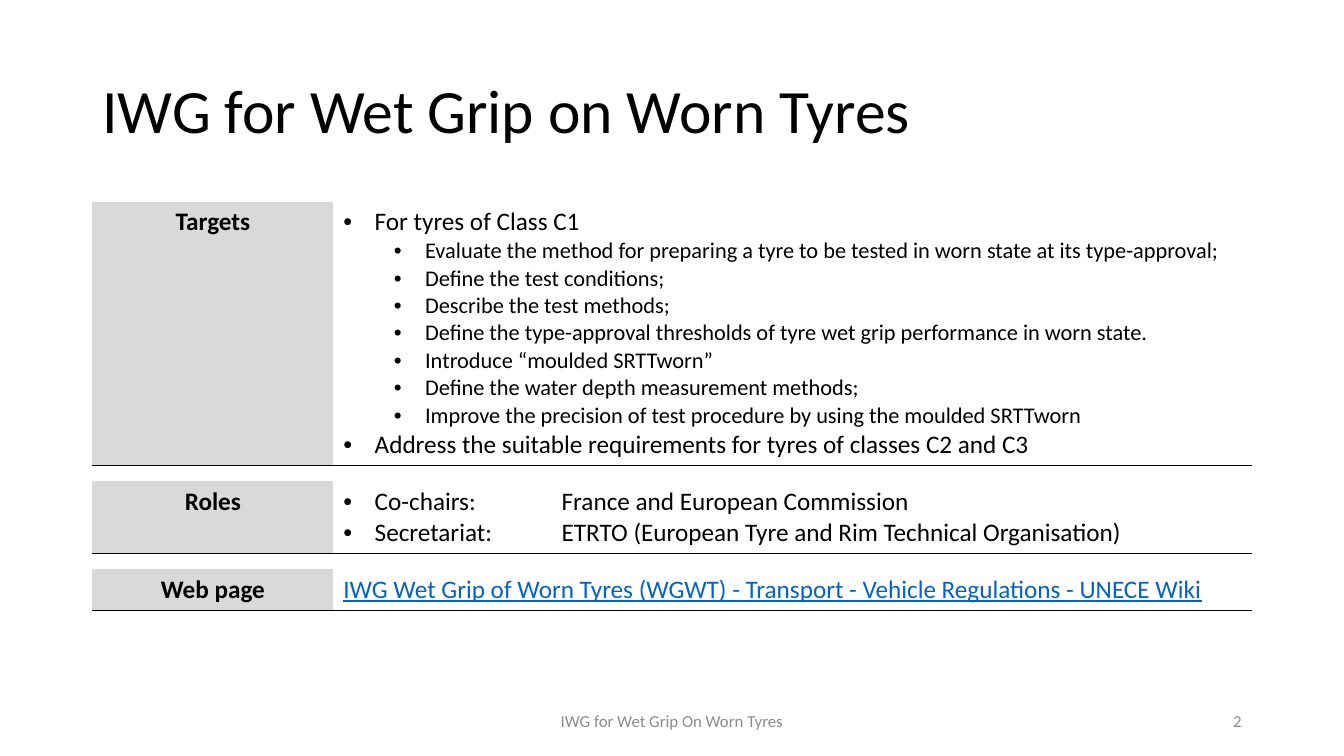
from dataclasses import dataclass

from lxml import etree
from pptx import Presentation
from pptx.dml.color import RGBColor
from pptx.enum import text as t
from pptx.oxml import parse_xml
from pptx.oxml import ns
from pptx.util import Cm, Pt


@dataclass(frozen=True)
class Theme:
    font: str = "Calibri"
    ink: str = "000000"
    label_fill: str = "D9D9D9"
    link: str = "0563C1"
    muted: str = "8C8C8C"
    title: int = 44
    body: int = 18
    detail: int = 16
    footer: int = 12


theme = Theme()


def add_run(paragraph, words, size, color=theme.ink, bold=False, underline=False):
    run = paragraph.add_run()
    run.text = words
    run.font.name = theme.font
    run.font.size = Pt(size)
    run.font.bold = bold
    run.font.underline = underline
    run.font.color.rgb = RGBColor.from_string(color)


def add_bullet(paragraph, level, tab_stop=None):
    paragraph.level = level
    properties = paragraph._p.get_or_add_pPr()
    properties.set("marL", str(Cm(0.79 + 1.27 * level)))
    properties.set("indent", str(Cm(-0.79)))
    font = etree.SubElement(properties, ns.qn("a:buFont"))
    font.set("typeface", "Arial")
    etree.SubElement(properties, ns.qn("a:buChar")).set("char", "•")
    if tab_stop:
        tabs = etree.SubElement(properties, ns.qn("a:tabLst"))
        tab = etree.SubElement(tabs, ns.qn("a:tab"))
        tab.set("pos", str(tab_stop))
        tab.set("algn", "l")


presentation = Presentation()
presentation.slide_width = Cm(33.87)
presentation.slide_height = Cm(19.05)
slide = presentation.slides.add_slide(presentation.slide_layouts[5])

# Title
title = slide.shapes.title
title.left, title.top, title.width, title.height = Cm(2.33), Cm(1.01), Cm(29.21), Cm(3.68)
title.text_frame.vertical_anchor = t.MSO_ANCHOR.MIDDLE
title.text_frame.word_wrap = True
heading = title.text_frame.paragraphs[0]
heading.alignment = t.PP_ALIGN.LEFT
heading.line_spacing = 0.9
add_run(heading, "IWG for Wet Grip on Worn Tyres", theme.title)

# Table content: label and (level, text) lines; None marks a spacer row
sections = [
    ("Targets", [
        (0, "For tyres of Class C1"),
        (1, "Evaluate the method for preparing a tyre to be tested in worn state at its type-approval;"),
        (1, "Define the test conditions;"),
        (1, "Describe the test methods;"),
        (1, "Define the type-approval thresholds of tyre wet grip performance in worn state."),
        (1, "Introduce “moulded SRTTworn”"),
        (1, "Define the water depth measurement methods;"),
        (1, "Improve the precision of test procedure by using the moulded SRTTworn"),
        (0, "Address the suitable requirements for tyres of classes C2 and C3"),
    ]),
    None,
    ("Roles", [
        (0, "Co-chairs:\tFrance and European Commission"),
        (0, "Secretariat:\tETRTO (European Tyre and Rim Technical Organisation)"),
    ]),
    None,
    ("Web page", [
        (None, "IWG Wet Grip of Worn Tyres (WGWT) - Transport - Vehicle Regulations - UNECE Wiki"),
    ]),
]
row_heights = [6.64, 0.41, 1.81, 0.41, 1.02]

# Table frame
frame = slide.shapes.add_table(5, 2, Cm(2.33), Cm(5.08), Cm(29.21), Cm(sum(row_heights)))
table = frame.table
table.first_row = table.horz_banding = False
table.columns[0].width, table.columns[1].width = Cm(6.07), Cm(23.14)

# Table rows
for row, (section, height) in enumerate(zip(sections, row_heights)):
    table.rows[row].height = Cm(height)
    label_cell, text_cell = table.cell(row, 0), table.cell(row, 1)
    for cell in (label_cell, text_cell):
        cell.fill.background()
        ruled = {"lnT": section is None, "lnB": section is not None}
        for position, side in enumerate(("lnL", "lnR", "lnT", "lnB")):
            paint = "<a:noFill/>"
            if ruled.get(side):
                paint = f'<a:solidFill><a:srgbClr val="{theme.ink}"/></a:solidFill>'
            border = parse_xml(f'<a:{side} {ns.nsdecls("a")} w="{Pt(1)}">{paint}</a:{side}>')
            cell._tc.get_or_add_tcPr().insert(position, border)
        if section is None:
            cell.margin_top = cell.margin_bottom = 0
            ending = etree.SubElement(cell.text_frame.paragraphs[0]._p, ns.qn("a:endParaRPr"))
            ending.set("sz", "400")
    if section is None:
        continue

    label, lines = section
    label_cell.fill.solid()
    label_cell.fill.fore_color.rgb = RGBColor.from_string(theme.label_fill)
    paragraph = label_cell.text_frame.paragraphs[0]
    paragraph.alignment = t.PP_ALIGN.CENTER
    add_run(paragraph, label, theme.body, bold=True)

    for index, (level, words) in enumerate(lines):
        text_frame = text_cell.text_frame
        paragraph = text_frame.add_paragraph() if index else text_frame.paragraphs[0]
        if level is None:
            add_run(paragraph, words, theme.body, theme.link, underline=True)
        else:
            add_bullet(paragraph, level, Cm(5.5) if "\t" in words else None)
            add_run(paragraph, words, theme.detail if level else theme.body)

# Footer and page number
for left, width, alignment, words in [
    (11.22, 11.43, t.PP_ALIGN.CENTER, "IWG for Wet Grip On Worn Tyres"),
    (23.92, 7.62, t.PP_ALIGN.RIGHT, "2"),
]:
    box = slide.shapes.add_textbox(Cm(left), Cm(17.66), Cm(width), Cm(1.01))
    box.text_frame.word_wrap = True
    box.text_frame.vertical_anchor = t.MSO_ANCHOR.MIDDLE
    paragraph = box.text_frame.paragraphs[0]
    paragraph.alignment = alignment
    add_run(paragraph, words, theme.footer, theme.muted)

presentation.save("out.pptx")
